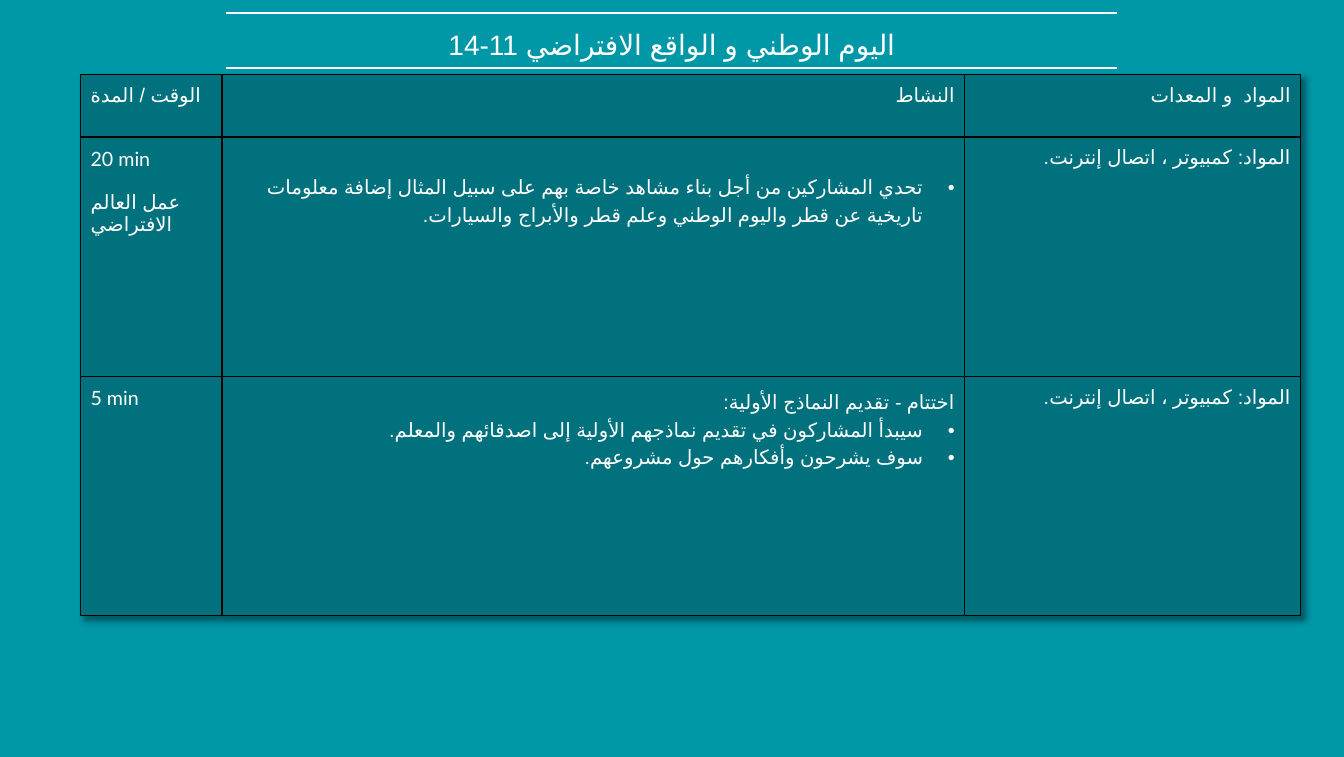
"""Builds the workshop schedule slide about the National Day and virtual reality."""
import lxml.etree
import pptx
import pptx.dml.color
import pptx.enum.lang
import pptx.enum.shapes
import pptx.enum.text
import pptx.oxml.ns
import pptx.util

Cm = pptx.util.Cm
Pt = pptx.util.Pt
ALIGN = pptx.enum.text.PP_ALIGN
WHITE, BLACK, TEAL, DARK_TEAL = "FFFFFF", "000000", "0097A7", "00717D"
INSET = Cm(0.25)
SIDES = ("left", "top", "right", "bottom")
MATERIALS = "المواد: كمبيوتر ، اتصال إنترنت."

LEFT = {"face": "Arial"}
LATIN = {"face": "Lato"}
SPACED = {"face": "Lato", "space_before": Pt(15)}
RIGHT = {"face": "Arial", "alignment": ALIGN.RIGHT}
LOOSE = {"face": "Lato", "alignment": ALIGN.RIGHT, "line_spacing": 1.25}
BULLET = {**LOOSE, "bullet": True}

ROWS = [
    [
        [("الوقت / المدة", LEFT)],
        [("النشاط", RIGHT)],
        [("المواد  و المعدات", RIGHT)],
    ],
    [
        [("20 min", LATIN), ("عمل العالم الافتراضي", SPACED)],
        [("تحدي المشاركين من أجل بناء مشاهد خاصة بهم على سبيل المثال إضافة معلومات "
          "تاريخية عن قطر واليوم الوطني وعلم قطر والأبراج والسيارات.", BULLET)],
        [(MATERIALS, RIGHT)],
    ],
    [
        [("5 min", LATIN)],
        [
            ("اختتام - تقديم النماذج الأولية:", LOOSE),
            ("سيبدأ المشاركون في تقديم نماذجهم الأولية إلى اصدقائهم والمعلم.", BULLET),
            ("سوف يشرحون وأفكارهم حول مشروعهم.", BULLET),
        ],
        [(MATERIALS, RIGHT)],
    ],
]
COLUMN_WIDTHS = [3.56, 18.69, 8.46]
ROW_HEIGHTS = [1.57, 6.02, 6.02]


def color(value):
    return pptx.dml.color.RGBColor.from_string(value)


def fill_solid(fill, value):
    fill.solid()
    fill.fore_color.rgb = color(value)


def add_element(parent, tag, **attributes):
    return lxml.etree.SubElement(parent, pptx.oxml.ns.qn(tag), attributes)


def set_values(target, values):
    for name, value in values.items():
        setattr(target, name, value)


def write_paragraph(para, text, size, values):
    values = dict(values)
    face = values.pop("face")
    bullet = values.pop("bullet", False)
    properties = para._p.get_or_add_pPr()
    if bullet:
        indent = Cm(0.79)
        properties.set("marL", str(indent))
        properties.set("indent", str(-indent))
        add_element(properties, "a:buFont", typeface="Arial")
        add_element(properties, "a:buChar", char="•")
    if values.get("alignment") == ALIGN.RIGHT:
        properties.set("rtl", "1")
    set_values(para, values)
    span = para.add_run()
    span.text = text
    set_values(span.font, {
        "name": face,
        "size": Pt(size),
        "bold": False,
        "language_id": pptx.enum.lang.MSO_LANGUAGE_ID.ARABIC,
    })
    span.font.color.rgb = color(WHITE)
    add_element(span.font._element, "a:cs", typeface="Arial")


def add_title(page, text):
    box = page.shapes.title
    set_values(box, {"left": Cm(5.38), "top": Cm(0.36), "width": Cm(23.06), "height": Cm(2.39)})
    frame = box.text_frame
    set_values(frame, {
        "word_wrap": True,
        "auto_size": pptx.enum.text.MSO_AUTO_SIZE.NONE,
        "vertical_anchor": pptx.enum.text.MSO_ANCHOR.TOP,
        **{f"margin_{side}": Cm(0.33) for side in SIDES},
    })
    write_paragraph(frame.paragraphs[0], text, 20, {"face": "Lato", "alignment": ALIGN.CENTER})


def add_rule(page, top):
    rule = page.shapes.add_connector(
        pptx.enum.shapes.MSO_CONNECTOR.STRAIGHT, Cm(5.69), Cm(top), Cm(28.12), Cm(top))
    rule.line.width = Pt(1.5)
    rule.line.color.rgb = color(WHITE)
    add_element(rule._element.spPr, "a:effectLst")


def write_cell(cell, paragraphs):
    set_values(cell, {f"margin_{side}": INSET for side in SIDES})
    properties = cell._tc.get_or_add_tcPr()
    for side in ("L", "R", "T", "B"):
        border = add_element(properties, f"a:ln{side}", w=str(Pt(1)))
        add_element(add_element(border, "a:solidFill"), "a:srgbClr", val=BLACK)
    fill_solid(cell.fill, DARK_TEAL)
    frame = cell.text_frame
    for index, (text, values) in enumerate(paragraphs):
        para = frame.add_paragraph() if index else frame.paragraphs[0]
        write_paragraph(para, text, 14, values)


def add_table_shadow(table):
    properties = table._tbl.tblPr
    effects = add_element(properties, "a:effectLst")
    properties.insert(0, effects)
    shadow = add_element(effects, "a:outerShdw", blurRad=str(Pt(4)), dist=str(Pt(4)),
                         dir="2700000", algn="tl", rotWithShape="0")
    add_element(add_element(shadow, "a:srgbClr", val=BLACK), "a:alpha", val="40000")


def add_schedule(page):
    table = page.shapes.add_table(
        len(ROW_HEIGHTS), len(COLUMN_WIDTHS), Cm(2.03), Cm(1.88),
        Cm(sum(COLUMN_WIDTHS)), Cm(sum(ROW_HEIGHTS))).table
    set_values(table, {"first_row": False, "horz_banding": False})
    for column, width in zip(table.columns, COLUMN_WIDTHS):
        column.width = Cm(width)
    for row, height, contents in zip(table.rows, ROW_HEIGHTS, ROWS):
        row.height = Cm(height)
        for cell, paragraphs in zip(row.cells, contents):
            write_cell(cell, paragraphs)
    table.cell(1, 1).margin_top = Cm(0.87)
    add_table_shadow(table)


def main():
    deck = pptx.Presentation()
    set_values(deck, {"slide_width": Cm(33.83), "slide_height": Cm(19.05)})
    page = deck.slides.add_slide(deck.slide_layouts[5])
    fill_solid(page.background.fill, TEAL)
    add_title(page, "اليوم الوطني و الواقع الافتراضي 11-14")
    for top in (0.33, 1.7):
        add_rule(page, top)
    add_schedule(page)
    deck.save("out.pptx")


if __name__ == "__main__":
    main()
